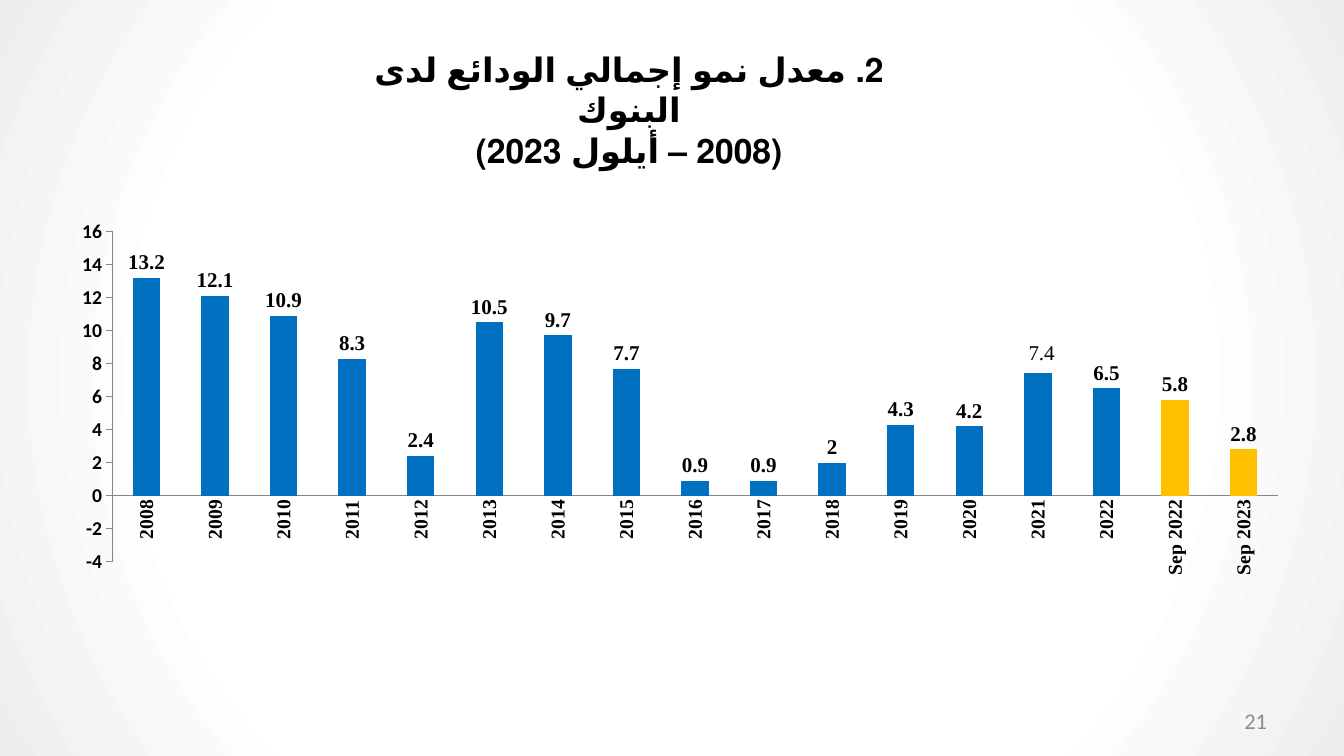
from lxml import etree
from pptx import Presentation
from pptx import util as u
from pptx.chart.data import CategoryChartData
from pptx.dml.color import RGBColor
from pptx.enum import chart as ch, text
from pptx.oxml import parse_xml
from pptx.oxml.ns import nsdecls, qn

SERIF = "Times New Roman"
GROWTH = {
    "2008": 13.2, "2009": 12.1, "2010": 10.9, "2011": 8.3, "2012": 2.4,
    "2013": 10.5, "2014": 9.7, "2015": 7.7, "2016": 0.9, "2017": 0.9,
    "2018": 2, "2019": 4.3, "2020": 4.2, "2021": 7.4, "2022": 6.5,
    "Sep 2022": 5.8, "Sep 2023": 2.8,
}


def px(n):
    """Convert whole pixels to EMU."""
    return u.Emu(round(n * 914400 / 100.8))


def rgb(color):
    """Turn a hex string into a colour."""
    return RGBColor.from_string(color)


def set_font(font, size, name="Calibri", color="000000", bold=True):
    """Format one font object."""
    font.size, font.name, font.bold = u.Pt(size), name, bold
    font.color.rgb = rgb(color)


def place(shape, left, top, width, height):
    """Move and size a shape."""
    shape.left, shape.top = px(left), px(top)
    shape.width, shape.height = px(width), px(height)


def set_background(s):
    """Fill the slide with a circular white to grey gradient."""
    fill = s.background.fill
    fill.gradient()
    for stop, (position, color) in zip(fill.gradient_stops, [(0.67, "FFFFFF"), (1, "EEEEEE")]):
        stop.position, stop.color.rgb = position, rgb(color)
    lin = next(s._element.iter(qn("a:lin")))
    lin.getparent().replace(lin, parse_xml(
        f'<a:path {nsdecls("a")} path="circle">'
        '<a:fillToRect l="50000" t="50000" r="50000" b="50000"/></a:path>'))


def add_title(s, lines):
    """Write the right-to-left title, one paragraph a line."""
    sp = s.shapes.title
    place(sp, 362, 44, 534, 92)
    tf = sp.text_frame
    tf.text = "\n".join(lines)
    tf.word_wrap = True
    tf.vertical_anchor = text.MSO_ANCHOR.TOP
    tf.auto_size = text.MSO_AUTO_SIZE.NONE
    for p in tf.paragraphs:
        p.alignment = text.PP_ALIGN.CENTER
        p._p.get_or_add_pPr().set("rtl", "1")
        for r in p.runs:
            set_font(r.font, 24)
            rPr = r._r.get_or_add_rPr()
            rPr.set("lang", "ar-JO")
            etree.SubElement(rPr, qn("a:cs")).set("typeface", "Helvetica")


def add_page_number(s, number):
    """Write the page number at the lower right."""
    sp = s.shapes.add_textbox(px(964), px(701), px(313), px(40))
    tf = sp.text_frame
    tf.word_wrap = True
    tf.vertical_anchor = text.MSO_ANCHOR.MIDDLE
    tf.text = number
    p = tf.paragraphs[0]
    p.alignment = text.PP_ALIGN.RIGHT
    set_font(p.runs[0].font, 16, color="8C8C8C", bold=False)


def manual_layout(target="", **fractions):
    """Build a manual chart layout from fractions of the chart."""
    inner = ""
    if target:
        inner = (f'<c:layoutTarget val="{target}"/>'
                 '<c:xMode val="edge"/><c:yMode val="edge"/>')
    inner += "".join(f'<c:{key} val="{value}"/>' for key, value in fractions.items())
    return parse_xml(f'<c:layout {nsdecls("c")}><c:manualLayout>{inner}</c:manualLayout></c:layout>')


def format_axis(axis, font_name, tick):
    """Set the line, ticks and labels of an axis."""
    axis.has_major_gridlines = False
    axis.major_tick_mark = tick
    axis.minor_tick_mark = ch.XL_TICK_MARK.NONE
    axis.format.line.color.rgb = rgb("868686")
    axis.format.line.width = u.Pt(0.75)
    set_font(axis.tick_labels.font, 14, font_name)


def format_labels(series):
    """Show values above the columns, with 2021 set apart."""
    labels = series.data_labels
    labels.show_value = True
    labels.position = ch.XL_LABEL_POSITION.OUTSIDE_END
    set_font(labels.font, 15, SERIF)
    index = list(GROWTH).index("2021")
    label = series.points[index].data_label
    label.text_frame.text = str(GROWTH["2021"])
    set_font(label.text_frame.paragraphs[0].runs[0].font, 15, SERIF, bold=False)
    label.position = ch.XL_LABEL_POSITION.OUTSIDE_END
    idx = next(e for e in series._element.iter(qn("c:idx"))
               if e.getparent().tag == qn("c:dLbl"))
    idx.addnext(manual_layout(x=0.003, y=-0.008))


def add_growth_chart(s):
    """Add the column chart of deposit growth."""
    data = CategoryChartData()
    data.categories = list(GROWTH)
    data.add_series("Series 1", list(GROWTH.values()))
    chart = s.shapes.add_chart(ch.XL_CHART_TYPE.COLUMN_CLUSTERED,
                               px(20), px(166), px(1263), px(546), data).chart
    chart.has_legend = chart.has_title = False
    set_font(chart.font, 10, bold=False)
    area = chart._chartSpace.chart.plotArea
    for old in area.findall(qn("c:layout")):
        area.remove(old)
    area.insert(0, manual_layout("inner", x=0.073, y=0.12, w=0.923, h=0.605))

    format_axis(chart.category_axis, SERIF, ch.XL_TICK_MARK.NONE)
    labels_body = chart.category_axis._element.find(qn("c:txPr")).find(qn("a:bodyPr"))
    labels_body.set("rot", "-5400000")
    labels_body.set("vert", "horz")
    values = chart.value_axis
    format_axis(values, "Calibri", ch.XL_TICK_MARK.OUTSIDE)
    values.minimum_scale, values.maximum_scale, values.major_unit = -4, 16, 2

    plot = chart.plots[0]
    plot.gap_width, plot.vary_by_categories = 150, False
    series = plot.series[0]
    series.invert_if_negative = False
    for i, name in enumerate(GROWTH):
        if name.startswith("Sep"):
            fill = series.points[i].format.fill
            fill.solid()
            fill.fore_color.rgb = rgb("FFC000")
    series.format.fill.solid()
    series.format.fill.fore_color.rgb = rgb("0070C0")
    format_labels(series)


def main():
    """Build and save the slide."""
    prs = Presentation()
    prs.slide_width, prs.slide_height = px(1344), px(756)
    s = prs.slides.add_slide(prs.slide_layouts[5])
    set_background(s)
    add_title(s, ["2. معدل نمو إجمالي الودائع لدى البنوك", "(2008 – أيلول 2023)"])
    add_page_number(s, "21")
    add_growth_chart(s)
    prs.save("out.pptx")


if __name__ == "__main__":
    main()
